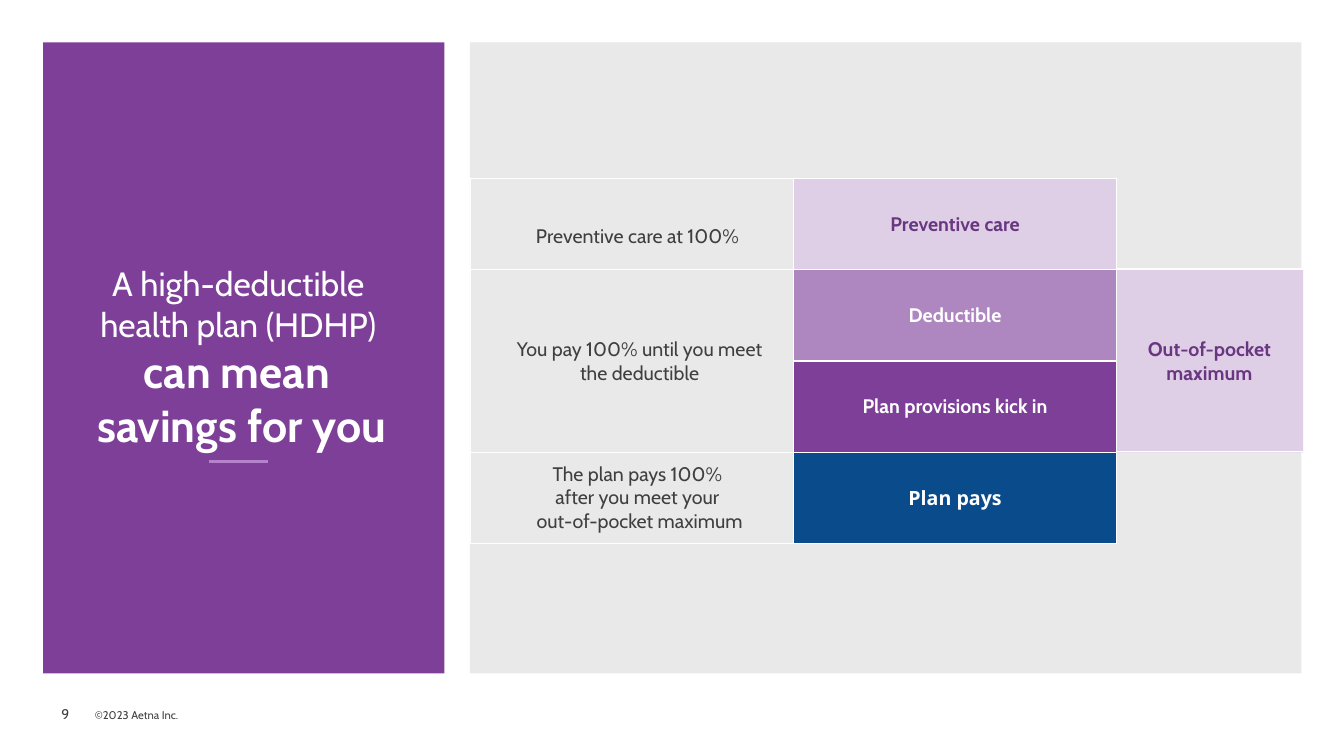
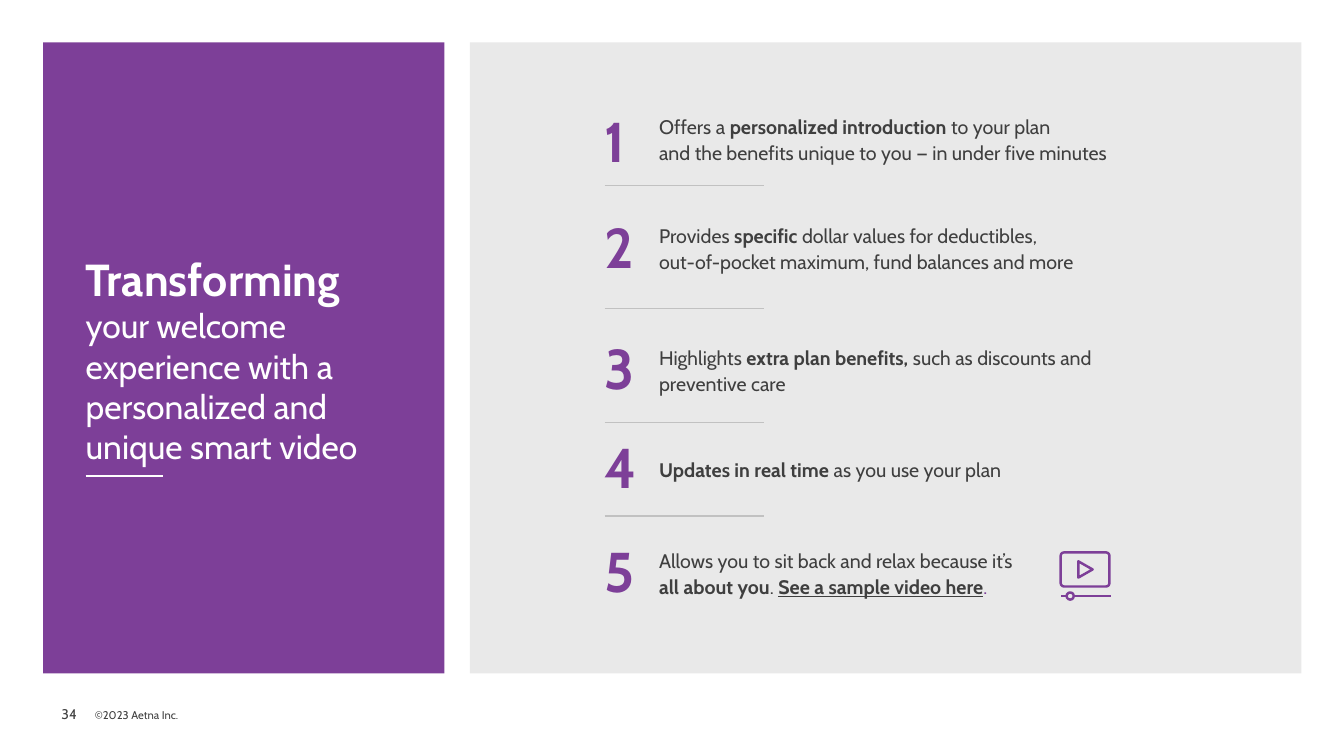
from lxml.etree import SubElement
from pptx import Presentation
from pptx.dml.color import RGBColor
from pptx.enum.shapes import MSO_CONNECTOR, MSO_SHAPE
from pptx.enum.text import MSO_ANCHOR, PP_ALIGN
from pptx.oxml.ns import qn
from pptx.util import Cm, Pt

WHITE = RGBColor(0xFF, 0xFF, 0xFF)
INK = RGBColor(0x3F, 0x3F, 0x3F)
PANEL_GREY = RGBColor(0xE9, 0xE9, 0xE9)
RULE_GREY = RGBColor(0xC1, 0xC1, 0xC1)
PURPLE = RGBColor(0x7D, 0x3F, 0x98)
DARK_PURPLE = RGBColor(0x69, 0x36, 0x81)
MID_PURPLE = RGBColor(0xAE, 0x86, 0xC0)
RULE_PURPLE = RGBColor(0xB5, 0x82, 0xCB)
PALE_PURPLE = RGBColor(0xDF, 0xCF, 0xE6)
BLUE = RGBColor(0x0A, 0x4B, 0x8C)
FONT = "Cabin"


def write(tf, text, size, color, bold=False, strong=None, align=PP_ALIGN.LEFT):
    """Fill a text frame; *starred* parts are bold, at the strong size if given."""
    tf.word_wrap = True
    p = tf.paragraphs[0]
    p.alignment = align
    p.font.name, p.font.size, p.font.bold = FONT, Pt(size), bold
    p.font.color.rgb = color
    for i, part in enumerate(text.split("*")):
        for j, line in enumerate(part.split("\n")):
            if j:
                p.add_line_break()
            if line:
                r = p.add_run()
                r.text = line
                if i % 2:
                    r.font.bold = True
                    if strong:
                        r.font.size = Pt(strong)
    return p


def rule(s, x1, x2, y, color, width):
    """Draw a horizontal line without a shadow; lengths in cm."""
    ln = s.shapes.add_connector(MSO_CONNECTOR.STRAIGHT, Cm(x1), Cm(y), Cm(x2), Cm(y))
    ln.line.color.rgb = color
    ln.line.width = Pt(width)
    SubElement(ln._element.spPr, qn("a:effectLst"))


prs = Presentation()
prs.slide_width, prs.slide_height = Cm(33.87), Cm(19.05)

# Shared panels, title and footer
TITLES = [
    ("9", "A high-deductible \nhealth plan (HDHP) \n*can mean \nsavings for you*",
     (1.02, 1.04, 10.16, 15.93), PP_ALIGN.CENTER),
    ("34", "*Transforming*\nyour welcome experience with a personalized and unique smart video",
     (2.16, 1.12, 7.95, 15.85), PP_ALIGN.LEFT),
]
slides = []
for number, title, title_box, align in TITLES:
    s = prs.slides.add_slide(prs.slide_layouts[6])
    slides.append(s)
    for x, w, color in [(1.09, 10.11, PURPLE), (11.84, 20.96, PANEL_GREY)]:
        sp = s.shapes.add_shape(MSO_SHAPE.RECTANGLE, Cm(x), Cm(1.07), Cm(w), Cm(15.9))
        sp.shadow.inherit = False
        sp.fill.solid()
        sp.fill.fore_color.rgb = color
        sp.line.fill.background()
    for text, box, size, strong, color, side in [
        (title, title_box, 24, 32, WHITE, align),
        (number, (1.55, 17.68, 0.99, 0.64), 10, None, INK, PP_ALIGN.LEFT),
        ("©2023 Aetna Inc.", (2.39, 17.86, 22.35, 0.33), 8, None, INK, PP_ALIGN.LEFT),
    ]:
        tf = s.shapes.add_textbox(*map(Cm, box)).text_frame
        tf.margin_left = tf.margin_right = tf.margin_top = tf.margin_bottom = 0
        tf.vertical_anchor = MSO_ANCHOR.MIDDLE
        write(tf, text, size, color, strong=strong, align=side)

# Plan slide: out-of-pocket box
s = slides[0]
rule(s, 5.26, 6.76, 11.63, RULE_PURPLE, 1.5)
sp = s.shapes.add_shape(MSO_SHAPE.RECTANGLE, Cm(28.12), Cm(6.78), Cm(4.72), Cm(4.62))
sp.shadow.inherit = False
sp.fill.solid()
sp.fill.fore_color.rgb = PALE_PURPLE
sp.line.fill.background()
sp.text_frame.vertical_anchor = MSO_ANCHOR.MIDDLE
write(sp.text_frame, "Out-of-pocket maximum", 14, DARK_PURPLE, True, align=PP_ALIGN.CENTER)
for y in (6.78, 11.38):
    rule(s, 26.06, 33.1, y, WHITE, 1)

# Plan slide: table of stages
STAGES = [
    ("Preventive care at 100% ", "Preventive care", PALE_PURPLE, DARK_PURPLE),
    ("You pay 100% until you meet the deductible", "Deductible", MID_PURPLE, WHITE),
    ("", "Plan provisions kick in", PURPLE, WHITE),
    ("The plan pays 100% \nafter you meet your \nout-of-pocket maximum", "Plan pays", BLUE, WHITE),
]
table = s.shapes.add_table(4, 2, Cm(11.86), Cm(4.5), Cm(16.28), Cm(9.2)).table
table.first_row = table.horz_banding = False
for col in table.columns:
    col.width = Cm(8.14)
for i, (note, stage, fill, color) in enumerate(STAGES):
    table.rows[i].height = Cm(2.3)
    for j, cell in enumerate(table.rows[i].cells):
        cell.vertical_anchor = MSO_ANCHOR.MIDDLE
        for edge in ("a:lnL", "a:lnR", "a:lnT", "a:lnB"):
            ln = SubElement(cell._tc.get_or_add_tcPr(), qn(edge), w=str(Pt(1)))
            SubElement(SubElement(ln, qn("a:solidFill")), qn("a:srgbClr"), val=str(WHITE))
        if j:
            cell.fill.solid()
            cell.fill.fore_color.rgb = fill
            p = write(cell.text_frame, stage, 14, color, True, align=PP_ALIGN.CENTER)
        else:
            cell.fill.background()
            cell.margin_left, cell.margin_right = Cm(0.89), Cm(0.51)
            write(cell.text_frame, note, 14, INK, align=PP_ALIGN.CENTER)
p.font.name = "Open Sans"
table.cell(0, 0).margin_top = Cm(0.73)
table.cell(1, 0).merge(table.cell(2, 0))

# Video slide: numbered points (number top, text top, text)
s = slides[1]
rule(s, 2.16, 4.11, 11.99, WHITE, 1.5)
POINTS = [
    (2.69, 2.72, "Offers a *personalized introduction *to your plan \n"
                 "and the benefits unique to you — in under five minutes"),
    (5.36, 5.46, "Provides *specific* dollar values for deductibles, \n"
                 "out-of-pocket maximum, fund balances and more"),
    (8.41, 8.53, "Highlights *extra plan benefits, *such as discounts and preventive care"),
    (10.9, 11.35, "*Updates in real time* as you use your plan"),
    (13.51, 13.64, "Allows you to sit back and relax because it’s \n"
                   "*all about you*. *See a sample video here*."),
]
for n, (number_y, text_y, text) in enumerate(POINTS, 1):
    tf = s.shapes.add_textbox(Cm(15.24), Cm(number_y), Cm(1.17), Cm(1.78)).text_frame
    tf.margin_left = tf.margin_right = tf.margin_top = tf.margin_bottom = 0
    write(tf, str(n), 40, PURPLE, True)
    tf = s.shapes.add_textbox(Cm(16.36), Cm(text_y), Cm(12.17), Cm(1.55)).text_frame
    p = write(tf, text, 14, INK)
    p.line_spacing = 1.1
p.runs[-2].font.underline = True
p.runs[-1].font.color.rgb = PURPLE
for y in (4.67, 7.77, 10.64, 13):
    rule(s, 15.24, 19.25, y, RULE_GREY, 1)

# Video slide: player icon
rule(s, 26.75, 28, 15.02, PURPLE, 2)
for kind, box, turn in [
    (MSO_SHAPE.ROUNDED_RECTANGLE, (26.73, 13.92, 1.23, 0.86), 0),
    (MSO_SHAPE.ISOSCELES_TRIANGLE, (27.15, 14.17, 0.41, 0.36), 90),
    (MSO_SHAPE.OVAL, (26.88, 14.93, 0.18, 0.18), 0),
]:
    sp = s.shapes.add_shape(kind, *map(Cm, box))
    sp.shadow.inherit = False
    sp.rotation = turn
    sp.fill.solid()
    sp.fill.fore_color.rgb = PANEL_GREY
    sp.line.color.rgb = PURPLE
    sp.line.width = Pt(1.75)
    if kind == MSO_SHAPE.ROUNDED_RECTANGLE:
        sp.adjustments[0] = 0.1

prs.save("out.pptx")
